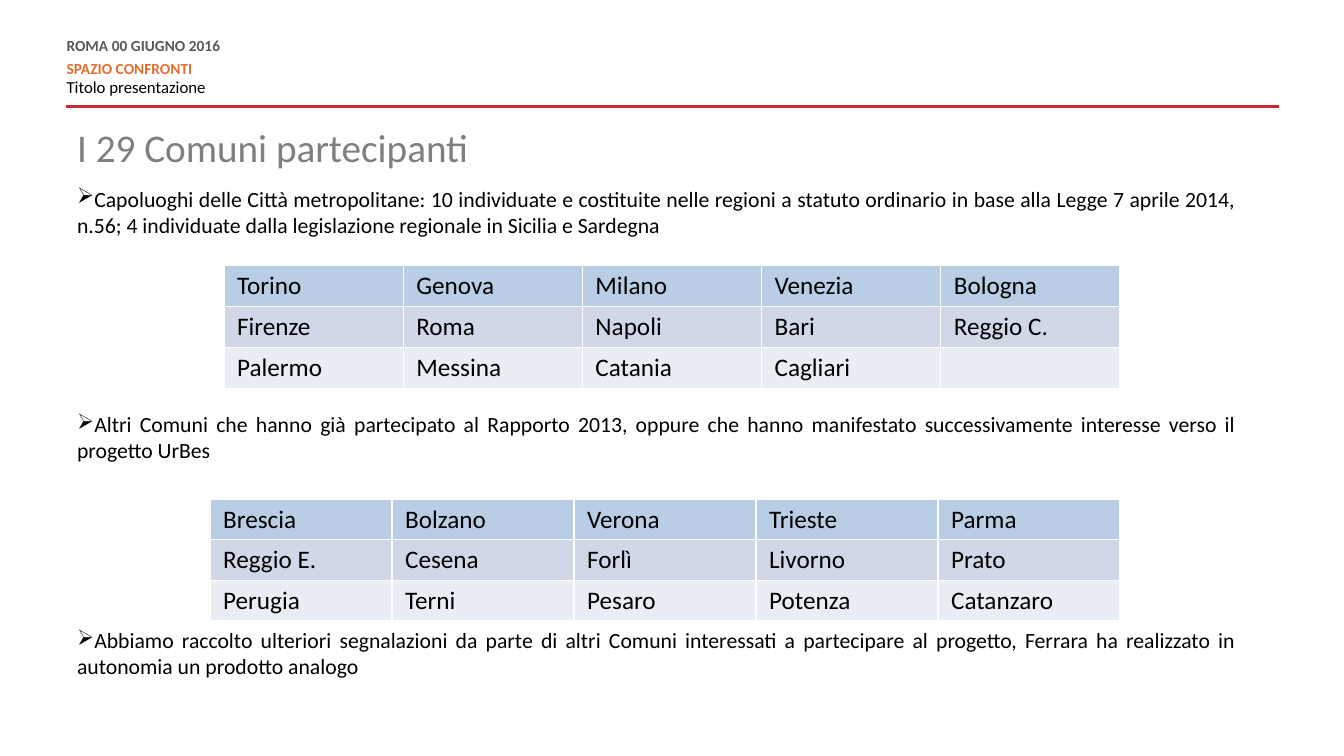
from lxml import etree
from pptx import Presentation
from pptx.dml.color import RGBColor
from pptx.enum.shapes import MSO_CONNECTOR
from pptx.enum.text import MSO_ANCHOR, PP_ALIGN
from pptx.oxml.ns import qn
from pptx.util import Pt

STRAIGHT = MSO_CONNECTOR.STRAIGHT
MIDDLE = MSO_ANCHOR.MIDDLE
JUSTIFY = PP_ALIGN.JUSTIFY

FONT = "Calibri"
BLACK = "000000"
WHITE = "FFFFFF"
ROW_FILLS = ["B9CDE5", "D0D8E8", "E9EDF4"]

# Text, size, colour, bold, space before, space after
HEADER = [
    ("ROMA 00 GIUGNO 2016", 11, "595959", True, 0, 6),
    ("SPAZIO CONFRONTI", 11, "E26F31", True, 0, 0),
    ("Titolo presentazione", 12, BLACK, False, 3, 6),
]

# Text, space before (leaving room for the table above)
POINTS = [
    ("Capoluoghi delle Città metropolitane: 10 individuate e costituite nelle "
     "regioni a statuto ordinario in base alla Legge 7 aprile 2014, n.56; "
     "4 individuate dalla legislazione regionale in Sicilia e Sardegna", 0),
    ("Altri Comuni che hanno già partecipato al Rapporto 2013, oppure che hanno "
     "manifestato successivamente interesse verso il progetto UrBes", 124),
    ("Abbiamo raccolto ulteriori segnalazioni da parte di altri Comuni "
     "interessati a partecipare al progetto, Ferrara ha realizzato in "
     "autonomia un prodotto analogo", 117),
]

METROPOLITAN_CITIES = [
    ["Torino", "Genova", "Milano", "Venezia", "Bologna"],
    ["Firenze", "Roma", "Napoli", "Bari", "Reggio C."],
    ["Palermo", "Messina", "Catania", "Cagliari", ""],
]
OTHER_CITIES = [
    ["Brescia", "Bolzano", "Verona", "Trieste", "Parma"],
    ["Reggio E.", "Cesena", "Forlì", "Livorno", "Prato"],
    ["Perugia", "Terni", "Pesaro", "Potenza", "Catanzaro"],
]


def rgb(value):
    return RGBColor.from_string(value)


def write(paragraph, text, size, color, bold=False):
    paragraph.text = text
    for run in paragraph.runs:
        run.font.name = FONT
        run.font.size = Pt(size)
        run.font.bold = bold
        run.font.color.rgb = rgb(color)


def add_frame(slide, left, top, width, height):
    frame = slide.shapes.add_textbox(
        Pt(left), Pt(top), Pt(width), Pt(height)).text_frame
    frame.word_wrap = True
    return frame


def paragraphs(frame, count):
    """Return the first paragraph of the frame followed by new ones."""
    return [frame.paragraphs[0]] + [frame.add_paragraph() for _ in range(count - 1)]


def add_header(slide):
    frame = add_frame(slide, 47.5, 28, 600, 42.5)
    frame.margin_left = frame.margin_right = 0
    frame.margin_top = frame.margin_bottom = 0
    for paragraph, entry in zip(paragraphs(frame, len(HEADER)), HEADER):
        text, size, color, bold, before, after = entry
        write(paragraph, text, size, color, bold)
        paragraph.line_spacing = Pt(10.8)
        paragraph.space_before = Pt(before)
        paragraph.space_after = Pt(after)


def add_rule(slide):
    rule = slide.shapes.add_connector(
        STRAIGHT, Pt(47.5), Pt(76), Pt(913.5), Pt(76))
    rule.line.color.rgb = rgb("C72A31")
    rule.line.width = Pt(2)
    etree.SubElement(rule._element.spPr, qn("a:effectLst"))


def add_title(slide):
    frame = add_frame(slide, 48, 82, 864, 46)
    frame.vertical_anchor = MIDDLE
    write(frame.paragraphs[0], "I 29 Comuni partecipanti", 28, "7F7F7F")


def add_points(slide):
    frame = add_frame(slide, 48, 129, 841, 390)
    for paragraph, (text, before) in zip(paragraphs(frame, len(POINTS)), POINTS):
        write(paragraph, text, 15.5, BLACK)
        paragraph.alignment = JUSTIFY
        paragraph.space_before = Pt(before)
        bullet = etree.SubElement(paragraph._p.get_or_add_pPr(), qn("a:buChar"))
        bullet.set("char", "➢")


def add_borders(cell):
    properties = cell._tc.get_or_add_tcPr()
    for side in ("lnL", "lnR", "lnT", "lnB"):
        border = etree.SubElement(properties, qn(f"a:{side}"), w=str(Pt(1)))
        fill = etree.SubElement(border, qn("a:solidFill"))
        etree.SubElement(fill, qn("a:srgbClr"), val=WHITE)


def add_city_table(slide, cities, left, top, column_width, row_height):
    row_count, column_count = len(cities), len(cities[0])
    table = slide.shapes.add_table(
        row_count, column_count, Pt(left), Pt(top),
        Pt(column_width * column_count), Pt(row_height * row_count)).table
    for row, (names, fill) in enumerate(zip(cities, ROW_FILLS)):
        for column, name in enumerate(names):
            cell = table.cell(row, column)
            cell.margin_left = cell.margin_right = Pt(9.4)
            add_borders(cell)
            cell.fill.solid()
            cell.fill.fore_color.rgb = rgb(fill)
            write(cell.text_frame.paragraphs[0], name, 18, BLACK)


def main():
    presentation = Presentation()
    presentation.slide_width = Pt(960)
    presentation.slide_height = Pt(540)
    slide = presentation.slides.add_slide(presentation.slide_layouts[6])
    add_rule(slide)
    add_header(slide)
    add_title(slide)
    add_points(slide)
    add_city_table(slide, METROPOLITAN_CITIES, 160, 189.4, 128, 29.3)
    add_city_table(slide, OTHER_CITIES, 150, 356.5, 130, 29)
    presentation.save("out.pptx")


if __name__ == "__main__":
    main()
